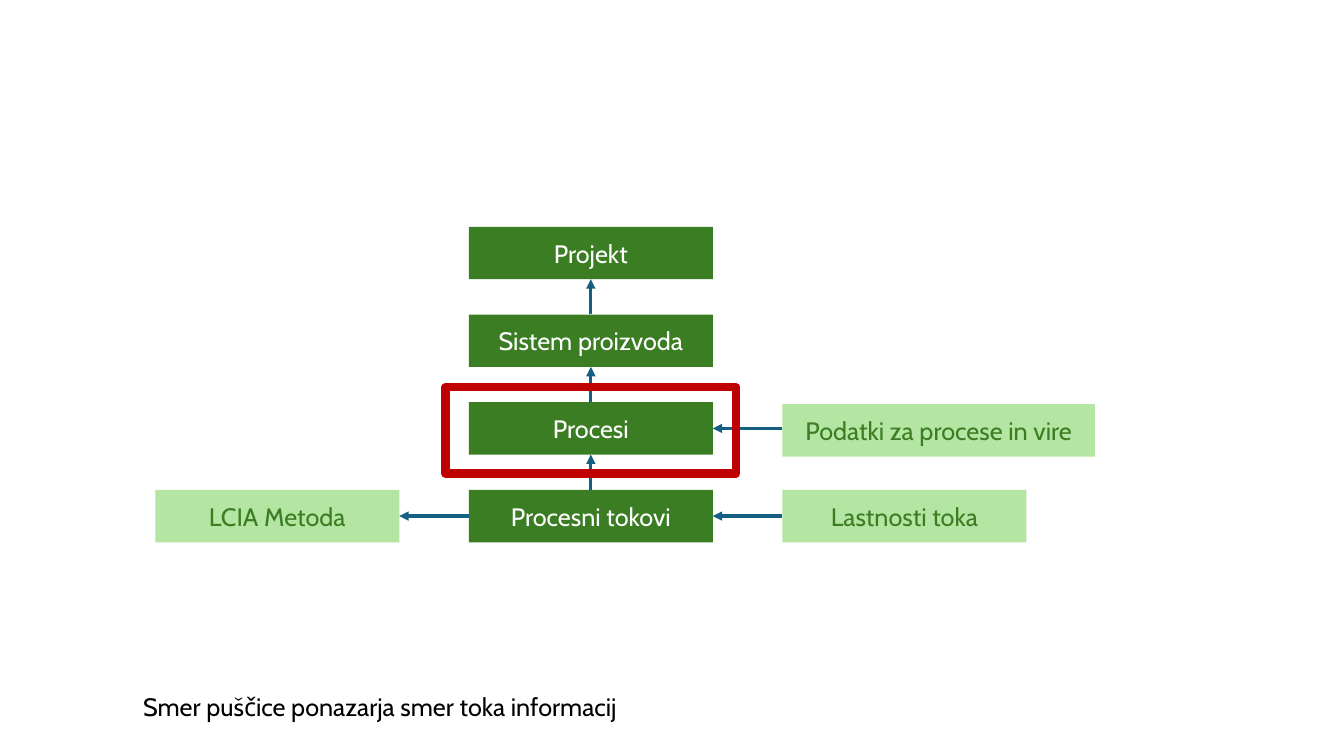
"""Build the slide that shows how information flows between model elements."""
from typing import NamedTuple

from lxml.etree import SubElement
from pptx import Presentation
from pptx.dml.color import RGBColor
from pptx.enum.shapes import MSO_CONNECTOR, MSO_SHAPE
from pptx.enum.text import MSO_ANCHOR, MSO_AUTO_SIZE, PP_ALIGN
from pptx.oxml.ns import qn
from pptx.shapes.autoshape import Shape
from pptx.shapes.shapetree import SlideShapes
from pptx.text.text import TextFrame
from pptx.util import Inches, Pt

COLORS = {
    "dark": "3B7D23",
    "light": "B4E5A2",
    "white": "FFFFFF",
    "black": "000000",
    "arrow": "156082",
    "frame": "C00000",
}
FONT = "Cabin"
LEFT, MID, RIGHT = 1.54, 4.65, 7.76
TOP, STEP = 2.25, 0.87
WIDTH, HEIGHT = 2.42, 0.52
BASE = TOP + 3 * STEP


class Box(NamedTuple):
    text: str
    left: float
    top: float
    fill: str = "light"
    ink: str = "dark"
    width: float = WIDTH


class Arrow(NamedTuple):
    start: str
    end: str
    out: int
    into: int


STACK = ["Projekt", "Sistem proizvoda", "Procesi", "Procesni tokovi"]
BOXES = [
    Box(text, MID, TOP + row * STEP, "dark", "white")
    for row, text in enumerate(STACK)
] + [
    Box("LCIA Metoda", LEFT, BASE),
    Box("Lastnosti toka", RIGHT, BASE),
    Box("Podatki za procese in vire", RIGHT, 4.01, width=3.1),
]
ARROWS = [Arrow(low, high, 0, 2) for high, low in zip(STACK, STACK[1:])] + [
    Arrow("Procesni tokovi", "LCIA Metoda", 1, 3),
    Arrow("Lastnosti toka", "Procesni tokovi", 1, 3),
]


def color(name: str) -> RGBColor:
    return RGBColor.from_string(COLORS[name])


def write(frame: TextFrame, text: str, ink: str) -> None:
    frame.text = text
    font = frame.paragraphs[0].runs[0].font
    font.name, font.size = FONT, Pt(18)
    font.color.rgb = color(ink)


def add_box(shapes: SlideShapes, box: Box) -> Shape:
    shape = shapes.add_shape(
        MSO_SHAPE.RECTANGLE, Inches(box.left), Inches(box.top),
        Inches(box.width), Inches(HEIGHT))
    shape.shadow.inherit = False
    shape.fill.solid()
    shape.fill.fore_color.rgb = color(box.fill)
    shape.line.fill.background()
    frame = shape.text_frame
    frame.word_wrap = True
    frame.vertical_anchor = MSO_ANCHOR.MIDDLE
    write(frame, box.text, box.ink)
    frame.paragraphs[0].alignment = PP_ALIGN.CENTER
    return shape


def add_arrow(shapes: SlideShapes, end: Shape, into: int,
              start: Shape | None = None, out: int = 0) -> None:
    level = end.top + end.height // 2
    line = shapes.add_connector(
        MSO_CONNECTOR.STRAIGHT, Inches(RIGHT), level, Inches(MID + WIDTH), level)
    if start is not None:
        line.begin_connect(start, out)
    line.end_connect(end, into)
    line.line.color.rgb = color("arrow")
    line.line.width = Pt(2.25)
    SubElement(line.line._get_or_add_ln(), qn("a:tailEnd"), type="triangle")
    SubElement(line._element.spPr, qn("a:effectLst"))


def add_note(shapes: SlideShapes, text: str) -> None:
    note = shapes.add_textbox(Inches(1.32), Inches(6.81), Inches(5.75), Inches(0.4))
    note.text_frame.word_wrap = True
    note.text_frame.auto_size = MSO_AUTO_SIZE.SHAPE_TO_FIT_TEXT
    write(note.text_frame, text, "black")


def add_frame(shapes: SlideShapes) -> None:
    frame = shapes.add_shape(
        MSO_SHAPE.RECTANGLE, Inches(4.42), Inches(3.84), Inches(2.88), Inches(0.86))
    frame.shadow.inherit = False
    frame.fill.background()
    frame.line.color.rgb = color("frame")
    frame.line.width = Pt(6)


def main() -> None:
    deck = Presentation()
    deck.slide_width, deck.slide_height = Inches(13.33), Inches(7.5)
    shapes = deck.slides.add_slide(deck.slide_layouts[6]).shapes
    nodes = {box.text: add_box(shapes, box) for box in BOXES}
    for link in ARROWS:
        add_arrow(shapes, nodes[link.end], link.into, nodes[link.start], link.out)
    add_arrow(shapes, nodes["Procesi"], 3)
    add_note(shapes, "Smer puščice ponazarja smer toka informacij")
    add_frame(shapes)
    deck.save("out.pptx")


if __name__ == "__main__":
    main()
